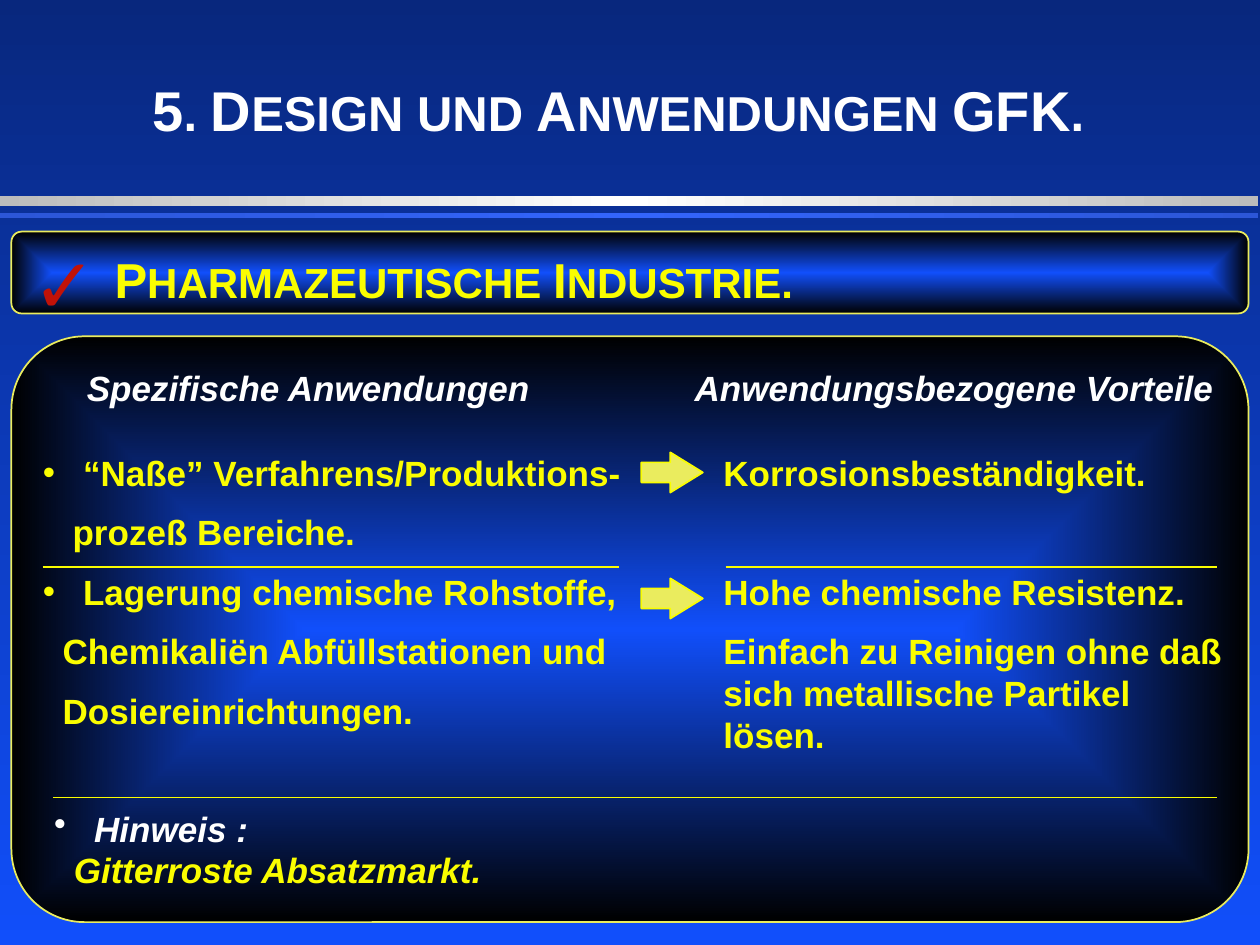
from lxml import etree
from pptx import Presentation
from pptx.dml.color import RGBColor
from pptx.enum.shapes import MSO_CONNECTOR, MSO_SHAPE
from pptx.enum.text import MSO_ANCHOR, MSO_AUTO_SIZE, PP_ALIGN
from pptx.oxml.ns import qn
from pptx.util import Cm, Pt

RECT, ROUNDED, ARROW = MSO_SHAPE.RECTANGLE, MSO_SHAPE.ROUNDED_RECTANGLE, MSO_SHAPE.RIGHT_ARROW
STRAIGHT = MSO_CONNECTOR.STRAIGHT
LEFT, CENTER = PP_ALIGN.LEFT, PP_ALIGN.CENTER
TOP, NO_FIT = MSO_ANCHOR.TOP, MSO_AUTO_SIZE.NONE

THEME = {
    "font": "Arial", "white": "FFFFFF", "yellow": "FAFD00", "pale": "EAEC5E", "red": "C11208",
    "background": [(0, "08277D"), (100, "114FFB")],
    "panel": [(0, "114FFB"), (100, "000000")],
    "silver": [(0, "BCBCBC"), (50, "FFFFFF"), (100, "BCBCBC")],
    "blue": [(0, "2C56D7"), (50, "3365FB"), (100, "2C56D7")],
    "title": (32, 28), "heading": (28, 24), "body": 20, "check": 44,
    "line": 1, "gap": 10,
}

# Content: titles alternate large and small capitals
TITLE = ["5", ". ", "D", "ESIGN UND ", "A", "NWENDUNGEN ", "GFK", "."]
HEADING = ["P", "HARMAZEUTISCHE ", "I", "NDUSTRIE."]
# List rows: text, indent in cm, bullet, space before in points
GAP = THEME["gap"]
USES = [
    ("“Naße” Verfahrens/Produktions-", 0.81, True, 0),
    ("prozeß Bereiche.", 0.6, False, GAP),
    ("Lagerung chemische Rohstoffe,", 0.81, True, GAP),
    ("Chemikaliën Abfüllstationen und", 0.4, False, GAP),
    ("Dosiereinrichtungen.", 0.4, False, GAP),
]
BENEFITS = [
    ("Korrosionsbeständigkeit.", 0, False, 0),
    ("Hohe chemische Resistenz.", 0, False, 44),
    ("Einfach zu Reinigen ohne daß sich metallische Partikel lösen.", 0, False, GAP),
]
NOTE = [("Hinweis :", 0.81, True, 0)]
NOTE_TEXT = [("Gitterroste Absatzmarkt.", 0.4, False, 0)]

# Boxes in cm: left, top, width, height
BARS = [((0, 3.96, 25.37, 0.2), "silver"), ((0, 4.29, 25.37, 0.1), "blue")]
PANELS = [(0.23, 6.78, 24.94, 11.81), (0.23, 4.67, 24.94, 1.65)]
COLUMN_HEADS = [
    ("Spezifische Anwendungen", (0.07, 7.26, 12.29, 1.12)),
    ("Anwendungsbezogene Vorteile", (13.28, 7.26, 11.91, 1.12)),
]
ARROW_TOPS = [9.12, 11.66]
RULES = [(1.07, 24.54, 16.08), (0.86, 12.47, 11.43), (14.63, 24.54, 11.43)]


def rgb(name):
    return RGBColor.from_string(THEME[name])


def set_gradient(fill, element, stops, angle=None):
    """Linear gradient at an angle, or one from the centre outwards."""
    fill.gradient()
    grad = element.find(".//" + qn("a:gradFill"))
    grad.clear()
    stop_list = etree.SubElement(grad, qn("a:gsLst"))
    for pos, color in stops:
        stop = etree.SubElement(stop_list, qn("a:gs"), pos=str(pos * 1000))
        etree.SubElement(stop, qn("a:srgbClr"), val=color)
    if angle is None:
        route = etree.SubElement(grad, qn("a:path"), {"path": "shape"})
        etree.SubElement(route, qn("a:fillToRect"), dict.fromkeys("ltrb", "50000"))
    else:
        etree.SubElement(grad, qn("a:lin"), ang=str(angle * 60000), scaled="0")


def add_shape(slide, kind, box, line=None):
    sp = slide.shapes.add_shape(kind, *map(Cm, box))
    sp.shadow.inherit = False
    if line:
        sp.line.color.rgb = rgb(line)
        sp.line.width = Pt(THEME["line"])
    else:
        sp.line.fill.background()
    return sp


def add_box(slide, box):
    return slide.shapes.add_textbox(*map(Cm, box))


def frame(sp, box, wrap=True):
    sp.left, sp.top, sp.width, sp.height = map(Cm, box)
    tf = sp.text_frame
    tf.word_wrap, tf.auto_size, tf.vertical_anchor = wrap, NO_FIT, TOP
    return tf


def style(r, size, color, bold=True, italic=False):
    f = r.font
    f.name, f.size, f.bold, f.italic = THEME["font"], Pt(size), bold, italic
    f.color.rgb = rgb(color)


def write_caps(p, parts, sizes, color):
    for i, part in enumerate(parts):
        r = p.add_run()
        r.text = part
        style(r, sizes[i % 2], color)


def write_list(tf, rows, color="yellow", italic=False, align=LEFT):
    for i, (text, indent, bullet, gap) in enumerate(rows):
        p = tf.add_paragraph() if i else tf.paragraphs[0]
        p.text, p.alignment = text, align
        p.space_before = Pt(gap)
        style(p.runs[0], THEME["body"], color, italic=italic)
        ppr = p._p.get_or_add_pPr()
        ppr.set("marL", str(Cm(indent)))
        ppr.set("indent", str(-Cm(indent) if bullet else 0))
        if bullet:
            etree.SubElement(ppr, qn("a:buChar"), char="•")
        else:
            etree.SubElement(ppr, qn("a:buNone"))


def main():
    prs = Presentation()
    prs.slide_width, prs.slide_height = Cm(25.4), Cm(19.05)
    s = prs.slides.add_slide(prs.slide_layouts[3])
    title, uses, benefits = s.placeholders

    # Background, bars and panels
    set_gradient(s.background.fill, s.element, THEME["background"], 90)
    for box, name in BARS:
        sp = add_shape(s, RECT, box)
        set_gradient(sp.fill, sp.element, THEME[name], 0)
    for box in PANELS:
        sp = add_shape(s, ROUNDED, box, "pale")
        sp.adjustments[0] = 0.125
        set_gradient(sp.fill, sp.element, THEME["panel"])

    # Bring the placeholders in front of the panels
    for sp in (title, uses, benefits):
        s.shapes.element.append(sp.element)

    # Title and section heading
    p = frame(title, (-0.03, 1.12, 24.99, 1.9)).paragraphs[0]
    p.alignment, p.line_spacing, p.space_before = CENTER, 1.2, Pt(0)
    write_caps(p, TITLE, THEME["title"], "white")
    box = (0.41, 4.65, 1.5, 2.13)
    p = frame(add_box(s, box), box).paragraphs[0]
    p.text = "✓"
    style(p.runs[0], THEME["check"], "red", bold=False)
    box = (2.06, 4.9, 14.22, 1.47)
    p = frame(add_box(s, box), box, wrap=False).paragraphs[0]
    write_caps(p, HEADING, THEME["heading"], "yellow")

    # Two columns with their heads
    write_list(frame(uses, (0.61, 8.97, 12.29, 6.2)), USES)
    write_list(frame(benefits, (14.33, 8.97, 10.87, 7.9)), BENEFITS)
    for text, box in COLUMN_HEADS:
        write_list(frame(add_box(s, box), box), [(text, 0, False, 0)], "white", True, CENTER)

    # Note below the columns
    for rows, color, box in ((NOTE, "white", (0.84, 16.15, 11.89, 1.12)),
                             (NOTE_TEXT, "yellow", (0.84, 16.99, 23.09, 1.12))):
        write_list(frame(add_box(s, box), box), rows, color, True)

    # Arrows and rules
    for top in ARROW_TOPS:
        sp = add_shape(s, ARROW, (12.93, top, 1.24, 0.81), "yellow")
        sp.adjustments[0], sp.adjustments[1] = 0.5, 0.81
        sp.fill.solid()
        sp.fill.fore_color.rgb = rgb("pale")
    for x1, x2, y in RULES:
        rule = s.shapes.add_connector(STRAIGHT, Cm(x1), Cm(y), Cm(x2), Cm(y))
        rule.line.color.rgb = rgb("yellow")
        rule.line.width = Pt(THEME["line"])
        etree.SubElement(rule.element.spPr, qn("a:effectLst"))

    prs.save("out.pptx")


if __name__ == "__main__":
    main()
